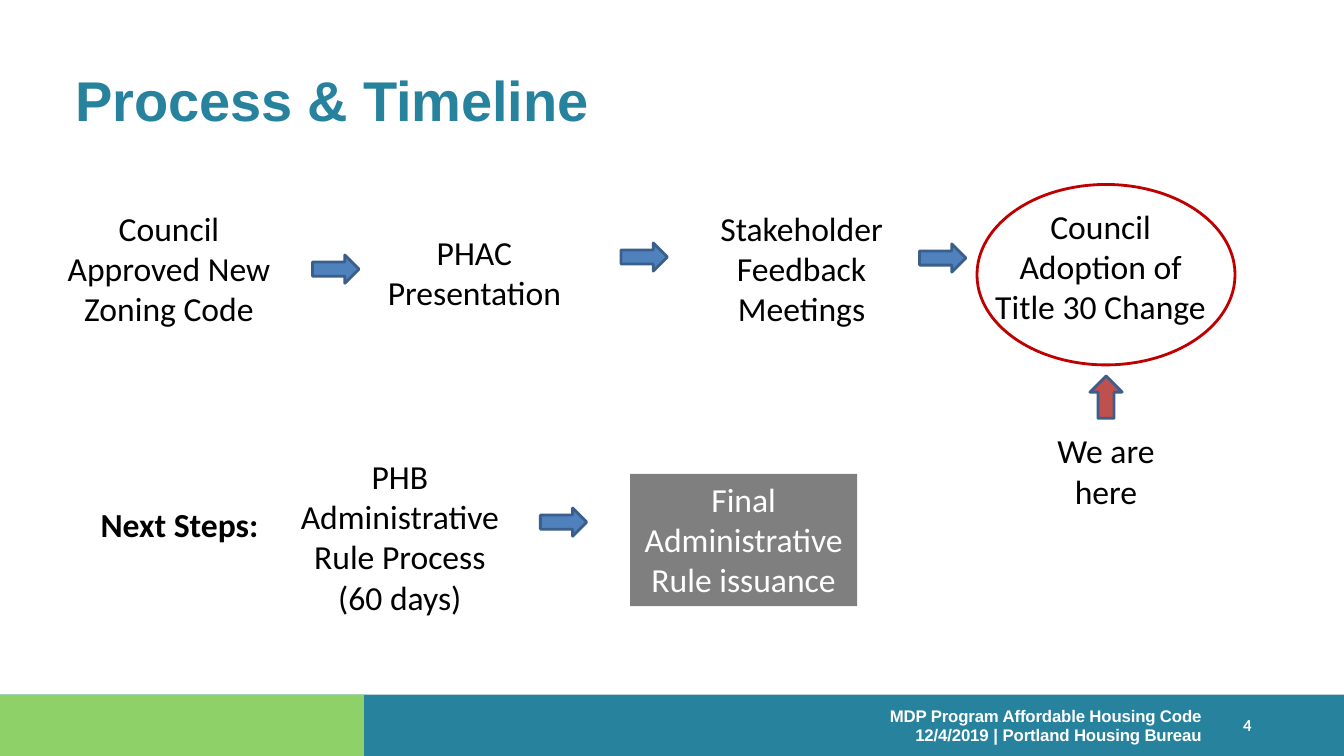
import pptx
import pptx.util
import pptx.dml.color
import pptx.enum.shapes
import pptx.enum.text
import pptx.oxml
import pptx.oxml.ns
import lxml.etree

WIDTH, HEIGHT = 13.33, 7.5
COLORS = {
    "teal": "27829D", "green": "8FD169", "white": "FFFFFF", "black": "000000",
    "blue": "4F81BD", "outline": "3A5F8C", "brick": "C0504D", "red": "C00000",
}
SHAPE = pptx.enum.shapes.MSO_SHAPE
ALIGN = pptx.enum.text.PP_ALIGN
Pt = pptx.util.Pt

# All positions and sizes are percentages of the slide's width and height.
TITLE = ("Process & Timeline", (5.63, 8.53, 56.34, 9.2))
STEPS = [
    ([("Council Approved New Zoning Code", 24)], 4.13, 26.8, 16.88, 3),
    ([("PHAC", 24), (" ", 18), ("Presentation", 24)], 27.46, 30, 15.68, 2),
    ([("Stakeholder Feedback Meetings", 24)], 50.04, 26.8, 19.2, 3),
    ([("Council Adoption of Title 30 Change", 24)], 73.07, 26.53, 17.63, 3),
    ([("PHB Administrative Rule Process (60 days)", 24)], 21.31, 59.6, 16.88, 4),
    ([("We are here", 24)], 75.69, 56.27, 13.2, 2),
]
NEXT_STEPS = ("Next Steps:", 6.75, 66, 13.43, 1)
FINAL_RULE = ("Final Administrative Rule issuance", 46.89, 62.67, 16.88, 3)
ARROW_SIZE = (3.45, 3.73)
ARROWS = [(23.26, 33.73), (46.21, 32.13), (68.42, 32.27), (40.21, 67.2)]
HERE_ARROW = (80.72, 50.4, 3.15, 4.27)
HERE_RING = (72.69, 24.4, 19.2, 23.87)
FOOTER_BANDS = [("teal", 100), ("green", 27.08)]
FOOTER_TOP, FOOTER_HEIGHT = 91.87, 8.13
FOOTER_LINES = [
    [("MDP Program Affordable Housing Code", -10)],
    [("12/4/2019 ", -10), ("| ", 0), ("Portland Housing Bureau", -10)],
]
FOOTER_TEXT = (39.38, 93.33, 50.04, 5.2)
PAGE_NUMBER = ("4", (92.5, 94.4, 1.5, 2.8))


def color(name):
    return pptx.dml.color.RGBColor.from_string(COLORS[name])


def area(left, top, width, height):
    return [pptx.util.Inches(share * side / 100)
            for share, side in zip((left, top, width, height), (WIDTH, HEIGHT) * 2)]


def text_height(lines):
    return 1.33 + 5.39 * lines


def add_run(paragraph, text, size, name="black", bold=False, font="Calibri", spacing=0):
    run = paragraph.add_run()
    run.text = text
    run.font.size = Pt(size)
    run.font.name = font
    run.font.bold = bold
    run.font.color.rgb = color(name)
    if spacing:
        run._r.get_or_add_rPr().set("spc", str(spacing))


def prepare(frame, margins=None):
    frame.word_wrap = True
    frame.auto_size = pptx.enum.text.MSO_AUTO_SIZE.NONE
    frame.vertical_anchor = pptx.enum.text.MSO_ANCHOR.TOP
    if margins is not None:
        frame.margin_left = frame.margin_right = frame.margin_bottom = 0
        frame.margin_top = pptx.util.Inches(margins)
    return frame


def add_text(place, margins=None):
    return prepare(slide.shapes.add_textbox(*area(*place)).text_frame, margins)


def add_figure(kind, place, fill=None, line=None):
    figure = slide.shapes.add_shape(kind, *area(*place))
    figure.shadow.inherit = False
    if fill:
        figure.fill.solid()
        figure.fill.fore_color.rgb = color(fill)
    else:
        figure.fill.background()
    if line:
        figure.line.color.rgb = color(line)
        figure.line.width = Pt(2)
    else:
        figure.line.fill.background()
    return figure


deck = pptx.Presentation()
deck.slide_width = pptx.util.Inches(WIDTH)
deck.slide_height = pptx.util.Inches(HEIGHT)
slide = deck.slides.add_slide(deck.slide_layouts[5])

for band_color, band_width in FOOTER_BANDS:
    add_figure(SHAPE.RECTANGLE, (0, FOOTER_TOP, band_width, FOOTER_HEIGHT), band_color)

number_text, number_place = PAGE_NUMBER
number_line = add_text(number_place, 0.01).paragraphs[0]
number_line.space_before = Pt(0.4)
add_run(number_line, number_text, 12, "white", True)

footer = add_text(FOOTER_TEXT, 0)
for index, parts in enumerate(FOOTER_LINES):
    footer_line = footer.add_paragraph() if index else footer.paragraphs[0]
    footer_line.alignment = ALIGN.RIGHT
    footer_line.line_spacing = Pt(14.2)
    for words, spacing in parts:
        add_run(footer_line, words, 12, "white", True, "Arial", spacing)

heading, heading_place = TITLE
title = slide.shapes.title
title.left, title.top, title.width, title.height = area(*heading_place)
title_line = prepare(title.text_frame, 0.01).paragraphs[0]
title_line.alignment = ALIGN.LEFT
title_line.space_before = Pt(1)
add_run(title_line, heading, 40, "teal", True, "Arial", -10)

for parts, left, top, width, lines in STEPS:
    step_line = add_text((left, top, width, text_height(lines))).paragraphs[0]
    step_line.alignment = ALIGN.CENTER
    for words, size in parts:
        add_run(step_line, words, size)

label, left, top, width, lines = NEXT_STEPS
label_line = add_text((left, top, width, text_height(lines))).paragraphs[0]
add_run(label_line, label, 24, bold=True)

final_words, left, top, width, lines = FINAL_RULE
final_rule = add_figure(SHAPE.RECTANGLE, (left, top, width, text_height(lines)), "black")
fill_color = final_rule._element.spPr.find(".//" + pptx.oxml.ns.qn("a:srgbClr"))
lxml.etree.SubElement(fill_color, pptx.oxml.ns.qn("a:alpha")).set("val", "50000")
final_line = prepare(final_rule.text_frame).paragraphs[0]
final_line.alignment = ALIGN.CENTER
add_run(final_line, final_words, 24, "white")

for corner in ARROWS:
    add_figure(SHAPE.RIGHT_ARROW, corner + ARROW_SIZE, "blue", "outline")
add_figure(SHAPE.RIGHT_ARROW, HERE_ARROW, "brick", "outline").rotation = 270
add_figure(SHAPE.OVAL, HERE_RING, line="red")

deck.save("out.pptx")
